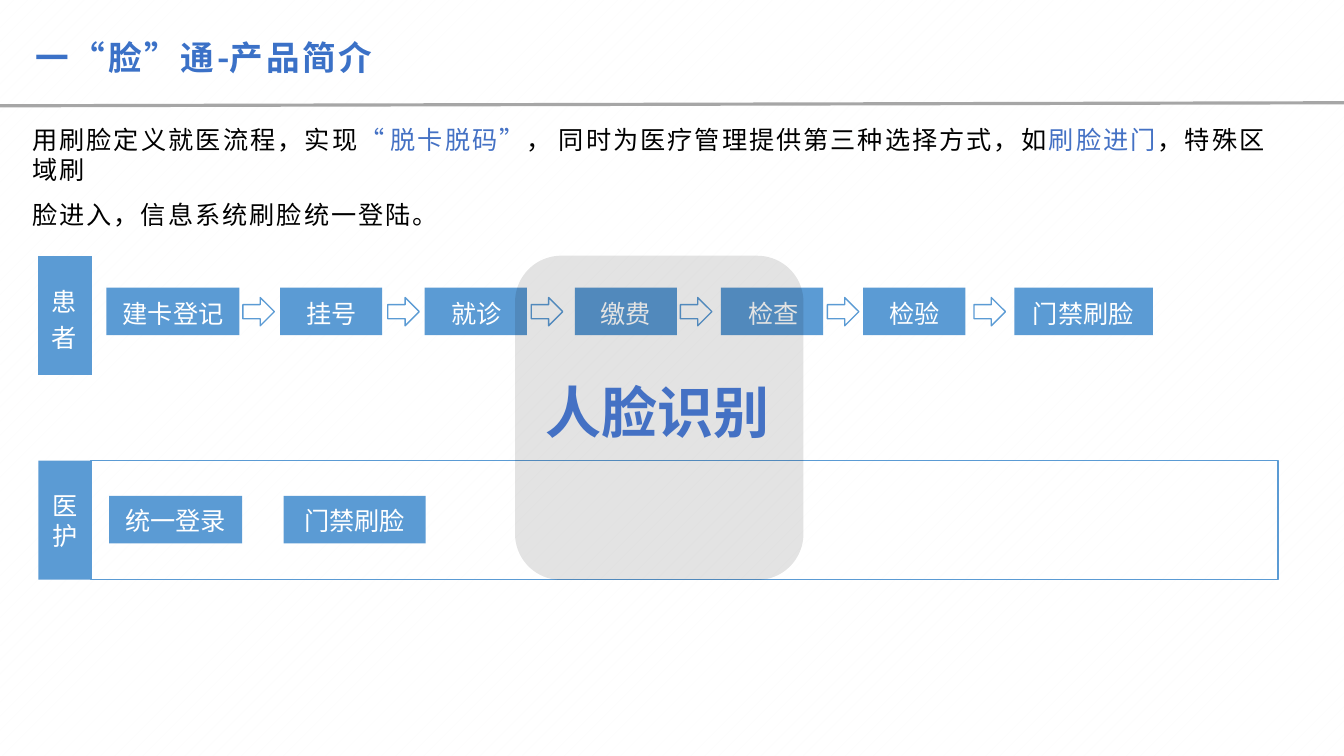
from lxml import etree
from pptx import Presentation
from pptx import util as u
from pptx.dml.color import RGBColor
from pptx.enum import dml, shapes, text
from pptx.oxml.ns import qn

Pt = u.Pt
BLUE, ACCENT, WHITE, BLACK = "5B9BD4", "4471C4", "FFFFFF", "000000"
CJK = "Noto Sans CJK SC"


def rgb(value):
    return RGBColor.from_string(value)


def add_run(p, content, size, color, spacing=0, bold=False, name=CJK):
    r = p.add_run()
    r.text = content
    r.font.name, r.font.size, r.font.bold = name, Pt(size), bold
    r.font.color.rgb = rgb(color)
    rPr = r._r.get_or_add_rPr()
    rPr.set("spc", str(round(spacing * 100)))
    rPr.set("lang", "zh-CN")
    etree.SubElement(rPr, qn("a:ea")).set("typeface", CJK)


prs = Presentation()
prs.slide_width, prs.slide_height = Pt(960), Pt(540)
s = prs.slides.add_slide(prs.slide_layouts[5])
bg = s.background.fill
bg.patterned()
bg.pattern = dml.MSO_PATTERN.PERCENT_5
bg.fore_color.rgb, bg.back_color.rgb = rgb("FCFBFB"), rgb(WHITE)

title = s.shapes.title
title.left, title.top, title.width, title.height = Pt(25.2), Pt(25.5), Pt(317), Pt(30)
intro = s.shapes.add_textbox(Pt(23), Pt(75.6), Pt(893.5), Pt(90))
caption = s.shapes.add_textbox(Pt(390), Pt(269), Pt(166), Pt(50))
for sp in (title, intro, caption):
    tf = sp.text_frame
    tf.margin_left = tf.margin_right = tf.margin_top = tf.margin_bottom = 0
    tf.word_wrap = True
    tf.auto_size = text.MSO_AUTO_SIZE.NONE
    tf.vertical_anchor = text.MSO_ANCHOR.MIDDLE

p = title.text_frame.paragraphs[0]
p.alignment = text.PP_ALIGN.LEFT
add_run(p, "一“脸”通", 24, "3B71C7", 2, True, "Arial")
add_run(p, "-", 24, "3B71C7", -0.1, True)
add_run(p, "产品简介", 24, "3B71C7", 2, True, "Arial")

rule = s.shapes.add_connector(shapes.MSO_CONNECTOR.STRAIGHT, 0, Pt(75.6), Pt(960), Pt(73.4))
rule.line.color.rgb, rule.line.width = rgb("A6A6A6"), Pt(2.28)
etree.SubElement(rule._element.spPr, qn("a:effectLst"))

tf = intro.text_frame
tf.vertical_anchor = text.MSO_ANCHOR.TOP
tf.margin_top = Pt(13)
p = tf.paragraphs[0]
for content, color, spacing, name in (
    ("用刷脸定义就医流程，实现", BLACK, 1.5, CJK),
    ("“ ", ACCENT, 0, "Arial"),
    ("脱卡脱码", ACCENT, 1.5, CJK),
    ("”", ACCENT, 0.7, "Arial"),
    ("， ", BLACK, 0.7, CJK),
    ("同时为医疗管理提供第三种选择方式，如", BLACK, 1.45, CJK),
    ("刷脸进门", ACCENT, 1.45, CJK),
    ("，特殊区域刷", BLACK, 1.45, CJK),
):
    add_run(p, content, 18, color, spacing, name=name)
p = tf.add_paragraph()
p.space_before = Pt(10.8)
add_run(p, "脸进入，信息系统刷脸统一登陆。", 18, BLACK, 1.45)
for p in tf.paragraphs:
    p.line_spacing = Pt(21.6)

frame = s.shapes.add_shape(shapes.MSO_SHAPE.RECTANGLE, Pt(65), Pt(329), Pt(848), Pt(85))
frame.shadow.inherit = False
frame.fill.background()
frame.line.color.rgb, frame.line.width = rgb(BLUE), Pt(0.96)

patient_boxes = [(x, 205.4, 73, 34, "") for x in (200, 303.4, 410.6, 515, 616.6)]
boxes = [(76, 205.4, 95, 34, ""), *patient_boxes, (724.6, 205.4, 99, 34, ""),
         (27.4, 329, 38, 85, "医 护"), (78, 354.2, 95, 34, "统一登录"),
         (202.5, 354.2, 101.5, 34, "门禁刷脸")]
for x, y, w, h, label in boxes:
    sp = s.shapes.add_shape(shapes.MSO_SHAPE.RECTANGLE, Pt(x), Pt(y), Pt(w), Pt(h))
    sp.shadow.inherit = False
    sp.fill.solid()
    sp.fill.fore_color.rgb = rgb(BLUE)
    sp.line.fill.background()
    if label:
        tf = sp.text_frame
        tf.word_wrap = True
        tf.margin_left = tf.margin_right = tf.margin_top = tf.margin_bottom = 0
        tf.vertical_anchor = text.MSO_ANCHOR.MIDDLE
        p = tf.paragraphs[0]
        p.alignment = text.PP_ALIGN.CENTER
        p.line_spacing = Pt(22)
        add_run(p, label, 18, WHITE)

steps = (("患\n者", 38, 9.4), ("建卡登记", 124, 22.3), ("挂号", 99.4, 29.5),
         ("就诊", 105, 33.8), ("缴费", 106, 35.3), ("检查", 103, 34.6),
         ("检验", 102, 32.4), ("门禁刷脸", 208, 33.1))
gf = s.shapes.add_table(1, len(steps), Pt(27.4), Pt(182.9), Pt(885.4), Pt(85))
table = gf.table
table.first_row = table.horz_banding = False
table._tbl.tblPr.find(qn("a:tableStyleId")).text = "{2D5ABB26-0587-4C30-8999-92F81FD0307C}"
for i, (label, width, indent) in enumerate(steps):
    table.columns[i].width = Pt(width)
    cell = table.cell(0, i)
    cell.margin_left, cell.margin_right = Pt(indent), 0
    cell.margin_top, cell.margin_bottom = (Pt(4), 0) if i == 0 else (0, Pt(5))
    cell.vertical_anchor = text.MSO_ANCHOR.MIDDLE
    if i == 0:
        cell.fill.solid()
        cell.fill.fore_color.rgb = rgb(BLUE)
    else:
        cell.fill.background()
    for n, line in enumerate(label.split("\n")):
        p = cell.text_frame.add_paragraph() if n else cell.text_frame.paragraphs[0]
        add_run(p, line, 18, WHITE)

for x in (173.5, 277, 379.5, 486, 591, 695.7):
    arrow = s.shapes.add_shape(shapes.MSO_SHAPE.RIGHT_ARROW, Pt(x), Pt(212.5), Pt(22.5), Pt(20.2))
    arrow.shadow.inherit = False
    arrow.fill.background()
    arrow.line.color.rgb, arrow.line.width = rgb(BLUE), Pt(0.96)

panel = s.shapes.add_shape(shapes.MSO_SHAPE.ROUNDED_RECTANGLE, Pt(367.9), Pt(182.7), Pt(206), Pt(231.6))
panel.adjustments[0] = 0.16
panel.shadow.inherit = False
panel.fill.solid()
panel.fill.fore_color.rgb = rgb(BLACK)
panel.line.fill.background()
black = panel._element.spPr.find(qn("a:solidFill"))[0]
etree.SubElement(black, qn("a:alpha")).set("val", "11000")

add_run(caption.text_frame.paragraphs[0], "人脸识别", 40, ACCENT, -0.1, True)
s.shapes._spTree.append(caption._element)

prs.save("out.pptx")
